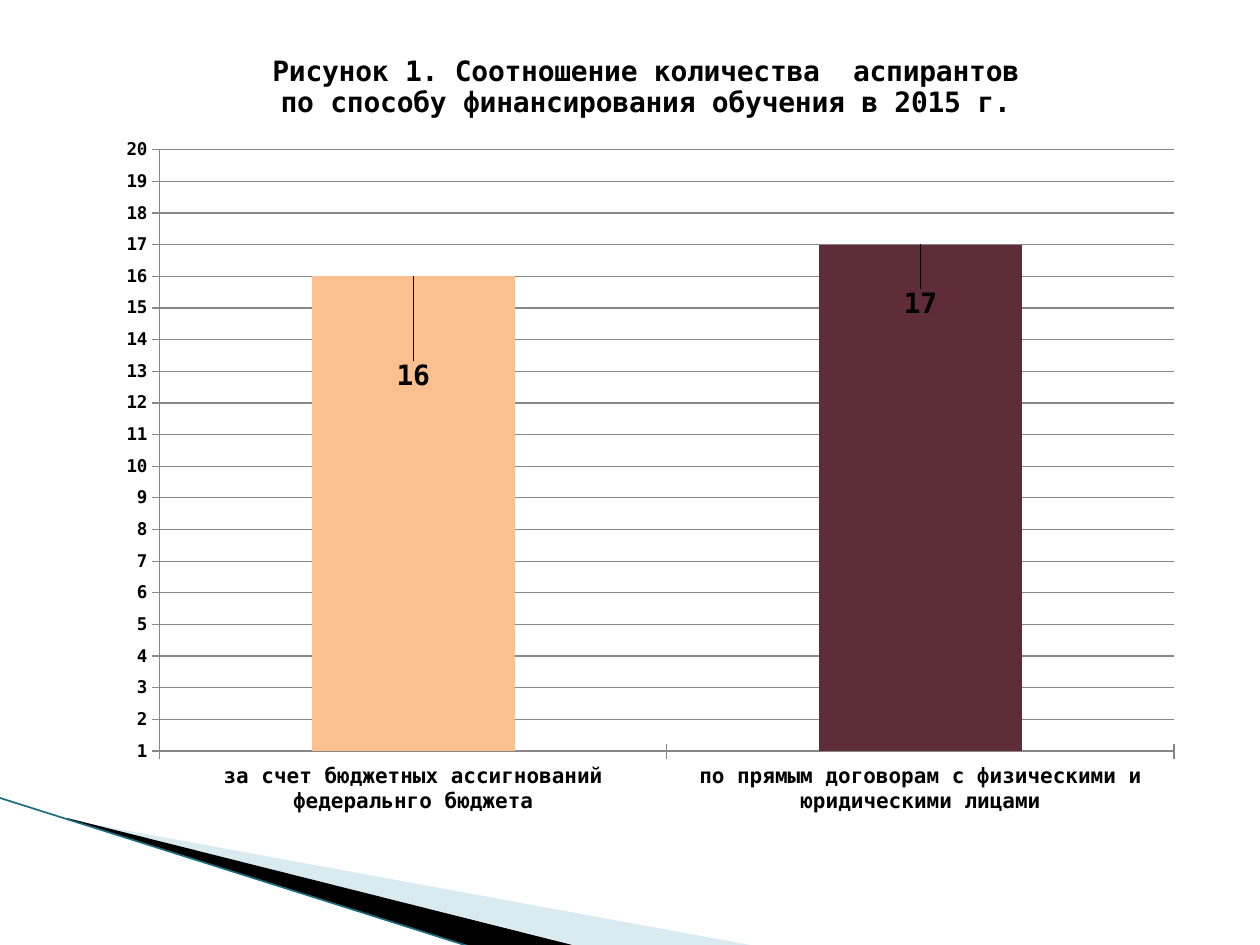
"""Build a slide with a column chart of postgraduates by source of funding."""
from dataclasses import dataclass

import lxml.etree
import pptx
import pptx.chart.data
import pptx.dml.color
import pptx.enum.chart
import pptx.enum.text
import pptx.oxml.ns
import pptx.util

SCALE = 914400 / 126
qn = pptx.oxml.ns.qn


@dataclass(frozen=True)
class Theme:
    font: str = "DejaVu Sans Mono"
    text: str = "000000"
    grid: str = "878787"
    edge: str = "1A6C80"
    pale: str = "A0CBDC"
    large: int = 16
    mid: int = 12
    small: int = 10


@dataclass(frozen=True)
class Wedge:
    points: tuple
    color: str
    alpha: int = 100


@dataclass(frozen=True)
class Bar:
    label: str
    value: int
    color: str
    drop: float


THEME = Theme()
WEDGES = (
    Wedge(((69, 820), (750, 945), (575, 945), (69, 819)), THEME.pale, 40),
    Wedge(((67, 818), (576, 946), (469, 947), (68, 819)), THEME.text),
)
BARS = (
    Bar("за счет бюджетных ассигнований федеральнго бюджета", 16, "FAC090", 0.15),
    Bar("по прямым договорам с физическими и юридическими лицами", 17, "5E2D37", 0.1),
)
TITLE = (
    "Рисунок 1. Соотношение количества  аспирантов",
    "по способу финансирования обучения в 2015 г.",
)


def px(size: int) -> pptx.util.Emu:
    return pptx.util.Emu(round(size * SCALE))


def paint(fill, color: str) -> None:
    fill.solid()
    fill.fore_color.rgb = pptx.dml.color.RGBColor.from_string(color)


def style(font, size: int) -> None:
    font.name = THEME.font
    font.size = pptx.util.Pt(size)
    font.bold = True
    paint(font.fill, THEME.text)


def place(node, **parts: float) -> None:
    """Fill a chart layout node with a manual layout."""
    for old in list(node):
        node.remove(old)
    box = lxml.etree.SubElement(node, qn("c:manualLayout"))
    for name, value in parts.items():
        lxml.etree.SubElement(box, qn(f"c:{name}")).set("val", str(value))


def layout(parent, index: int):
    """Return the layout node of a chart part, adding it at the index if absent."""
    node = parent.find(qn("c:layout"))
    if node is None:
        node = lxml.etree.Element(qn("c:layout"))
        parent.insert(index, node)
    return node


def draw_wedge(slide, wedge: Wedge) -> None:
    first, *rest = wedge.points
    path = slide.shapes.build_freeform(*first, scale=SCALE)
    path.add_line_segments(rest, close=True)
    shape = path.convert_to_shape()
    shape.shadow.inherit = False
    shape.line.fill.background()
    paint(shape.fill, wedge.color)
    if wedge.alpha < 100:
        tone = shape.fill._xPr.find(qn("a:solidFill"))[0]
        lxml.etree.SubElement(tone, qn("a:alpha")).set("val", str(wedge.alpha * 1000))


def draw_edge(slide) -> None:
    line = slide.shapes.add_connector(1, px(0), px(798), px(468), px(946))
    paint(line.line.fill, THEME.edge)
    line.line.width = pptx.util.Pt(0.95)
    lxml.etree.SubElement(line._element.spPr, qn("a:effectLst"))


def set_title(chart) -> None:
    frame = chart.chart_title.text_frame
    for index, text in enumerate(TITLE):
        para = frame.add_paragraph() if index else frame.paragraphs[0]
        para.text = text
        para.alignment = pptx.enum.text.PP_ALIGN.LEFT
        style(para.font, THEME.large)
    title = chart.chart_title
    title.include_in_layout = False
    place(layout(title._element, 1), xMode="edge", yMode="edge", x=0.15, y=0.03)


def set_axis(axis, size: int) -> None:
    axis.major_tick_mark = pptx.enum.chart.XL_TICK_MARK.CROSS
    axis.minor_tick_mark = pptx.enum.chart.XL_TICK_MARK.NONE
    paint(axis.format.line.fill, THEME.grid)
    style(axis.tick_labels.font, size)


def set_bars(plot) -> None:
    plot.gap_width = 150
    plot.vary_by_categories = False
    row = plot.series[0]
    paint(row.format.fill, BARS[0].color)
    row.data_labels.show_value = True
    style(row.data_labels.font, THEME.large)
    for index, bar in enumerate(BARS):
        point = row.points[index]
        paint(point.format.fill, bar.color)
        label = point.data_label
        style(label.font, THEME.large)
        label.position = pptx.enum.chart.XL_LABEL_POSITION.OUTSIDE_END
        node = row.data_labels._element.findall(qn("c:dLbl"))[index]
        place(layout(node, 1), x=0, y=bar.drop)


def draw_chart(slide) -> None:
    data = pptx.chart.data.CategoryChartData()
    data.categories = [bar.label for bar in BARS]
    data.add_series("Series 1", [bar.value for bar in BARS])
    kind = pptx.enum.chart.XL_CHART_TYPE.COLUMN_CLUSTERED
    frame = slide.shapes.add_chart(kind, px(105), px(26), px(1091), px(804), data)
    chart = frame.chart
    style(chart.font, THEME.small)
    chart.has_legend = False
    set_title(chart)
    set_axis(chart.category_axis, THEME.mid)
    axis = chart.value_axis
    set_axis(axis, THEME.small)
    axis.minimum_scale, axis.maximum_scale, axis.major_unit = 1, 20, 1
    axis.has_major_gridlines = True
    paint(axis.major_gridlines.format.line.fill, THEME.grid)
    set_bars(chart.plots[0])
    area = chart._chartSpace.chart.plotArea
    place(layout(area, 0), layoutTarget="inner", xMode="edge", yMode="edge",
          x=0.05, y=0.154, w=0.93, h=0.748)


def main() -> None:
    deck = pptx.Presentation()
    deck.slide_width, deck.slide_height = px(1260), px(945)
    slide = deck.slides.add_slide(deck.slide_layouts[6])
    for wedge in WEDGES:
        draw_wedge(slide, wedge)
    draw_edge(slide)
    draw_chart(slide)
    deck.save("out.pptx")


if __name__ == "__main__":
    main()
